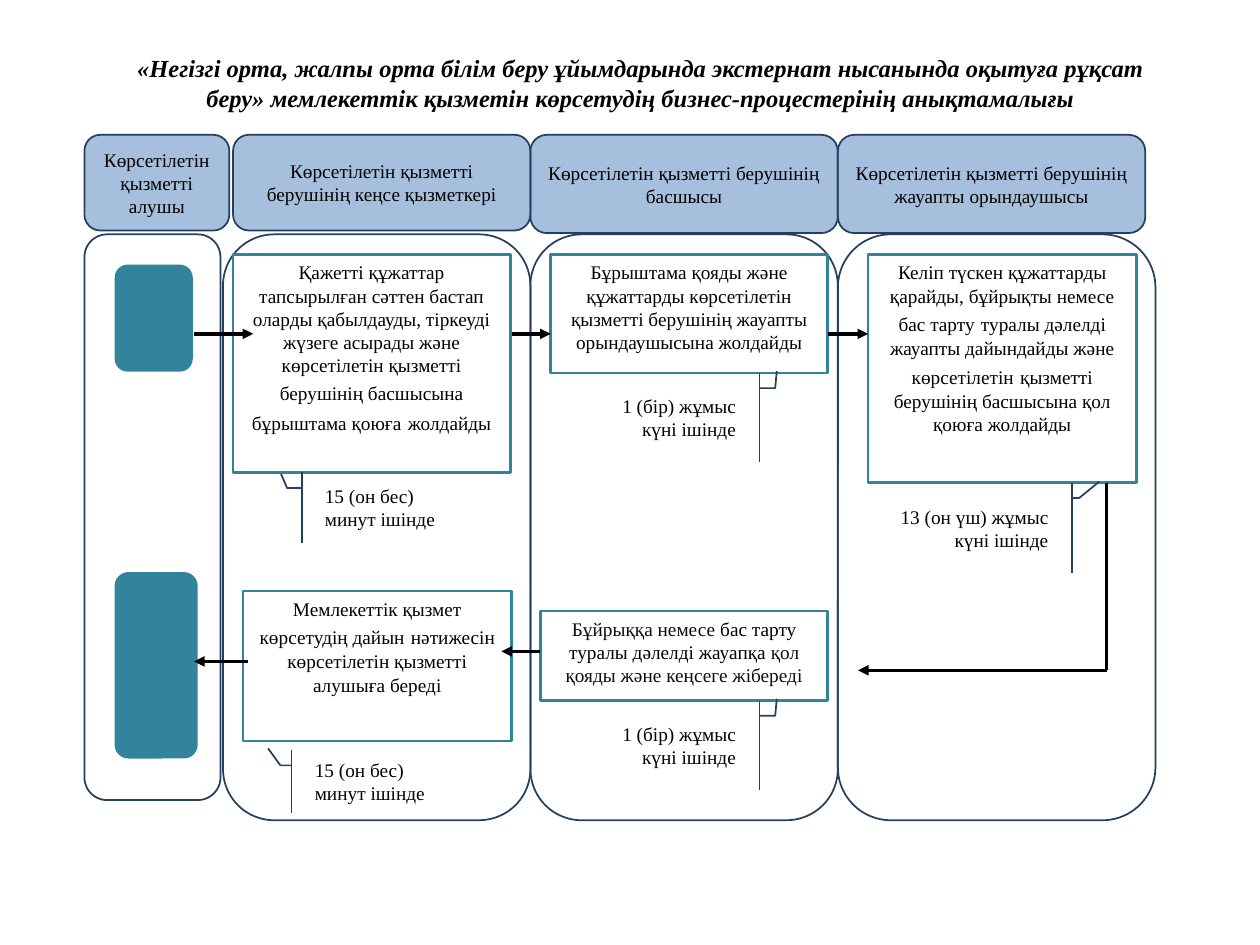
from lxml import etree
from pptx import Presentation
from pptx.dml.color import RGBColor
from pptx.enum.shapes import MSO_CONNECTOR, MSO_SHAPE
from pptx.enum.text import MSO_ANCHOR, PP_ALIGN
from pptx.oxml.ns import qn
from pptx.util import Inches, Pt

FONT = "Times New Roman"
BLACK = RGBColor(0x00, 0x00, 0x00)
SOFT_BLACK = RGBColor(0x0D, 0x0D, 0x0D)
WHITE = RGBColor(0xFF, 0xFF, 0xFF)
BLUE = RGBColor(0x4F, 0x81, 0xBD)
NAVY = RGBColor(0x24, 0x3F, 0x60)
TEAL = RGBColor(0x31, 0x84, 0x9B)

# Content; "|" marks a wide 14 pt space inside 11 pt text
TITLE = ("«Негізгі орта, жалпы орта білім беру ұйымдарында экстернат нысанында "
         "оқытуға рұқсат беру» мемлекеттік қызметін көрсетудің "
         "бизнес-процестерінің анықтамалығы")
HEADERS = [  # text, left, width, height
    ("Көрсетілетін қызметті алушы", 0.67, 1.15, 0.76),
    ("Көрсетілетін қызметті берушінің кеңсе қызметкері", 1.85, 2.36, 0.76),
    ("Көрсетілетін қызметті берушінің басшысы", 4.21, 2.44, 0.78),
    ("Көрсетілетін қызметті берушінің жауапты орындаушысы", 6.65, 2.44, 0.78),
]
LANES = [  # left, width, height, opacity of the white fill in percent
    (0.67, 1.08, 4.49, 10),
    (6.65, 2.52, 4.65, None),
    (1.77, 2.44, 4.65, 20),
    (4.21, 2.44, 4.65, None),
]
TERMINALS = [(0.91, 2.1, 0.62, 0.85), (0.91, 4.54, 0.66, 1.48)]
STEPS = [  # text pieces with colours, box
    ([("Қажетті құжаттар тапсырылған сәттен бастап оларды қабылдауды, тіркеуді "
       "жүзеге асырады және көрсетілетін қызметті берушінің басшысына|"
       "бұрыштама қоюға|жолдайды", BLACK)], (1.85, 2.02, 2.2, 1.73)),
    ([("Мемлекеттік қызмет көрсетудің дайын|нәтижесін көрсетілетін қызметті "
       "алушыға береді", BLACK)], (1.93, 4.69, 2.13, 1.19)),
    ([("Бұрыштама қояды және құжаттарды көрсетілетін қызметті берушінің "
       "жауапты орындаушысына жолдайды", BLACK)], (4.37, 2.02, 2.2, 0.94)),
    ([("Бұйрыққа немесе ", SOFT_BLACK),
      ("бас тарту туралы дәлелді жауапқа ", BLACK),
      ("қол қояды және кеңсеге жібереді", SOFT_BLACK)], (4.29, 4.85, 2.28, 0.71)),
    ([("Келіп түскен құжаттарды қарайды, бұйрықты немесе бас тарту|туралы "
       "дәлелді жауапты дайындайды және көрсетілетін|қызметті берушінің "
       "басшысына қол қоюға жолдайды", BLACK)], (6.89, 2.02, 2.13, 1.81)),
]
LEADER = (0.17, 1.07, 0.17, 1.17, -0.02, 1.18)
DEADLINES = [  # text, box, alignment, leader points as y, x fractions
    ("15 (он бес) минут ішінде", (2.48, 3.75, 1.19, 0.56), PP_ALIGN.LEFT,
     (0.22, -0.07, 0.22, -0.17, 0.02, -0.21)),
    ("15 (он бес) минут ішінде", (2.4, 5.95, 1.09, 0.5), PP_ALIGN.LEFT,
     (0.25, -0.08, 0.25, -0.16, -0.02, -0.25)),
    ("1 (бір) жұмыс күні ішінде", (4.69, 2.96, 1.25, 0.71), PP_ALIGN.RIGHT, LEADER),
    ("1 (бір) жұмыс күні ішінде", (4.69, 5.56, 1.25, 0.71), PP_ALIGN.RIGHT, LEADER),
    ("13 (он үш) жұмыс күні ішінде", (6.97, 3.83, 1.45, 0.72), PP_ALIGN.RIGHT,
     (0.17, 1.06, 0.17, 1.1, -0.01, 1.21)),
]
ARROWS = [  # start x, end x, y
    (1.54, 2.01, 2.65), (4.06, 4.37, 2.65), (6.57, 6.89, 2.65),
    (8.79, 6.81, 5.32), (1.97, 1.54, 5.25), (4.29, 3.98, 5.17),
]
RETURN_LINE = (8.78, 3.83, 8.78, 5.32)


def add_run(paragraph, text, size, color):
    run = paragraph.add_run()
    run.text = text
    run.font.name = FONT
    run.font.size = Pt(size)
    run.font.color.rgb = color
    return run


def write(shape, pieces, align=PP_ALIGN.CENTER, anchor=MSO_ANCHOR.MIDDLE):
    shape.text_frame.word_wrap = True
    shape.text_frame.vertical_anchor = anchor
    paragraph = shape.text_frame.paragraphs[0]
    paragraph.alignment = align
    paragraph.space_after = Pt(10)
    for text, color in pieces:
        for index, part in enumerate(text.split("|")):
            if index:
                add_run(paragraph, " ", 14, color)
            add_run(paragraph, part, 11, color)


def add_box(slide, kind, box, fill=None, opacity=None, line=None, width=1):
    shape = slide.shapes.add_shape(kind, *map(Inches, box))
    shape.shadow.inherit = False
    if fill is None:
        shape.fill.background()
    else:
        shape.fill.solid()
        shape.fill.fore_color.rgb = fill
    if opacity is not None:
        color = shape.fill._xPr.find(qn("a:solidFill"))[0]
        etree.SubElement(color, qn("a:alpha"), val=str(opacity * 1000))
    if line is None:
        shape.line.fill.background()
    else:
        shape.line.color.rgb = line
        shape.line.width = Pt(width)
    return shape


def add_line(slide, kind, points, arrow):
    connector = slide.shapes.add_connector(kind, *map(Inches, points))
    connector.line.color.rgb = BLACK
    connector.line.width = Pt(2)
    if arrow:
        etree.SubElement(connector.line._get_or_add_ln(), qn("a:tailEnd"), type="triangle")
    etree.SubElement(connector._element.spPr, qn("a:effectLst"))


def main():
    presentation = Presentation()
    presentation.slide_width, presentation.slide_height = Inches(10), Inches(7.5)
    slide = presentation.slides.add_slide(presentation.slide_layouts[6])

    # Title
    title = slide.shapes.add_textbox(*map(Inches, (0.91, 0.37, 8.35, 0.57)))
    title.text_frame.word_wrap = True
    title.text_frame.vertical_anchor = MSO_ANCHOR.MIDDLE
    paragraph = title.text_frame.paragraphs[0]
    paragraph.alignment = PP_ALIGN.CENTER
    run = add_run(paragraph, TITLE, 14, BLACK)
    run.font.bold = run.font.italic = True

    # Column headers and lanes
    for text, left, width, height in HEADERS:
        header = add_box(slide, MSO_SHAPE.ROUNDED_RECTANGLE, (left, 1.07, width, height),
                         BLUE, 50, NAVY)
        write(header, [(text, BLACK)])
    for left, width, height, opacity in LANES:
        add_box(slide, MSO_SHAPE.ROUNDED_RECTANGLE, (left, 1.86, width, height),
                WHITE if opacity else None, opacity, NAVY)

    # Start and end of the process
    for box in TERMINALS:
        add_box(slide, MSO_SHAPE.ROUNDED_RECTANGLE, box, TEAL)

    # Process steps and their deadlines
    for pieces, box in STEPS:
        step = add_box(slide, MSO_SHAPE.RECTANGLE, box, line=TEAL, width=1.5)
        write(step, pieces, anchor=MSO_ANCHOR.TOP)
    for text, box, align, leader in DEADLINES:
        callout = add_box(slide, MSO_SHAPE.LINE_CALLOUT_2_ACCENT_BAR, box, line=NAVY)
        for index, value in enumerate(leader):
            callout.adjustments[index] = value
        write(callout, [(text, BLACK)], align)

    # Flow
    add_line(slide, MSO_CONNECTOR.STRAIGHT, RETURN_LINE, False)
    for start, end, y in ARROWS:
        add_line(slide, MSO_CONNECTOR.ELBOW, (start, y, end, y), True)

    presentation.save("out.pptx")


if __name__ == "__main__":
    main()
